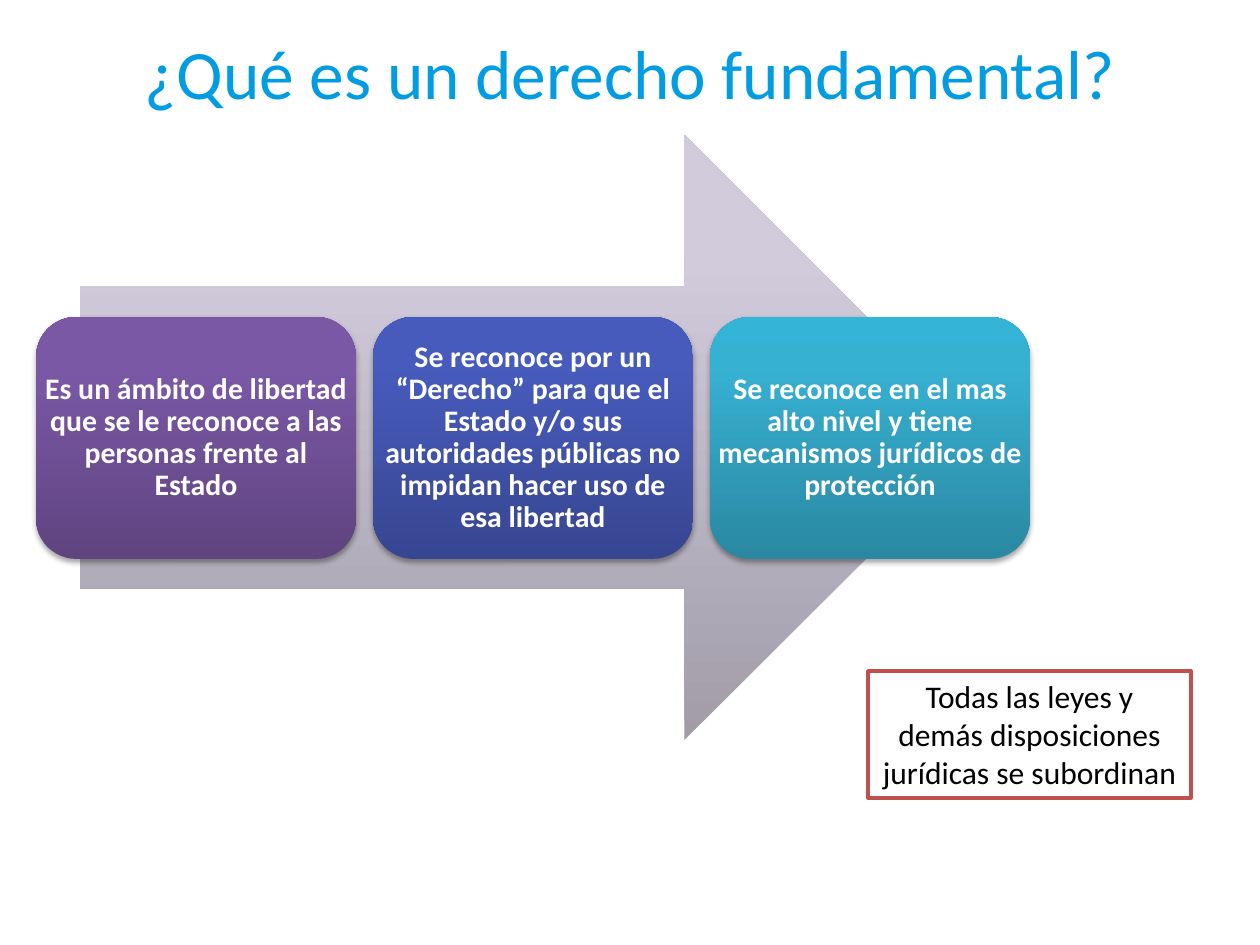
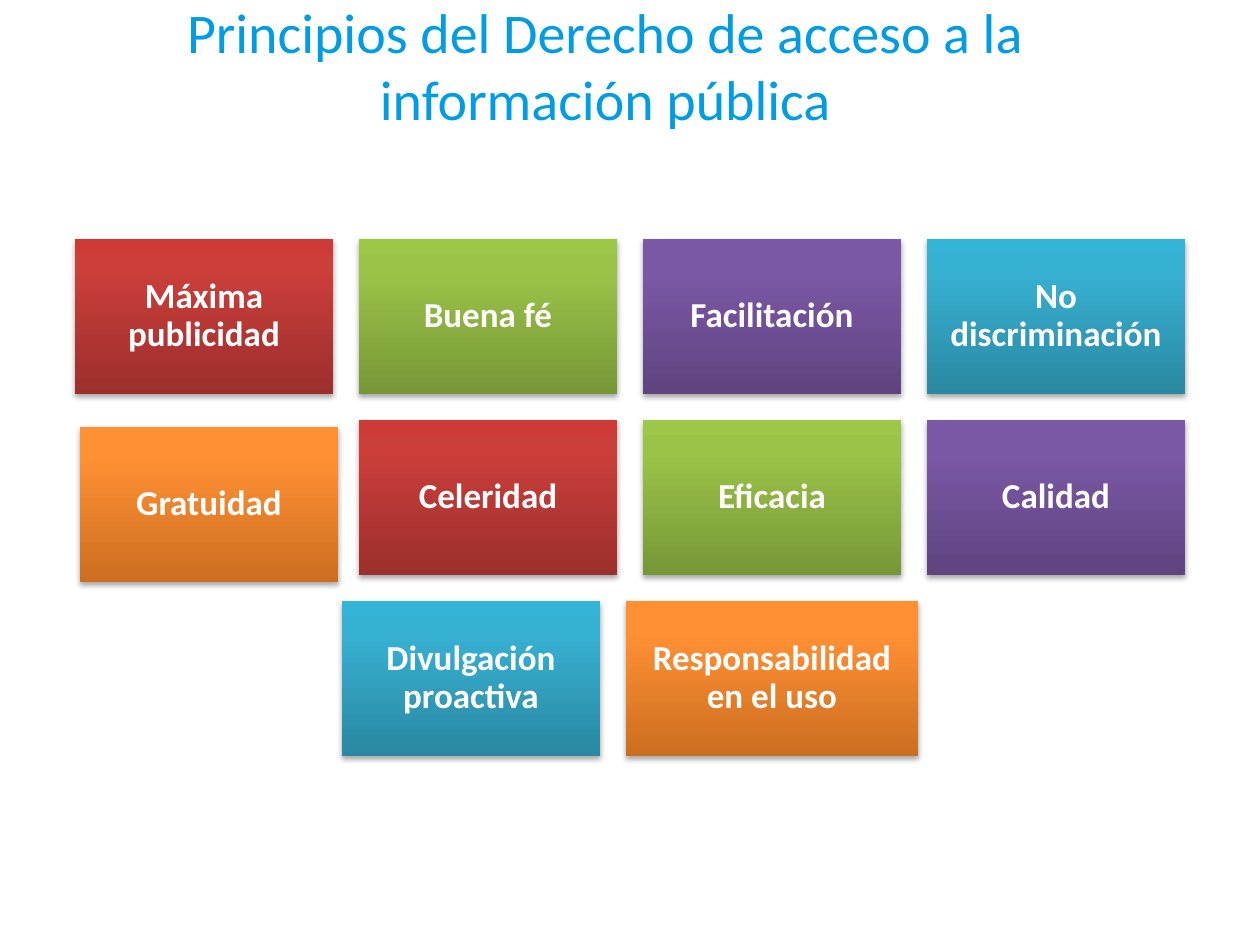
from copy import deepcopy
from dataclasses import dataclass
from itertools import cycle

from lxml import etree
from pptx import Presentation
from pptx.dml.color import RGBColor
from pptx.enum.shapes import MSO_SHAPE
from pptx.enum.text import MSO_ANCHOR, MSO_AUTO_SIZE, PP_ALIGN
from pptx.oxml.ns import qn
from pptx.util import Inches, Pt

ARROW, ROUND, RECT = (MSO_SHAPE.RIGHT_ARROW, MSO_SHAPE.ROUNDED_RECTANGLE,
                      MSO_SHAPE.RECTANGLE)
CENTER, MIDDLE, TOP = PP_ALIGN.CENTER, MSO_ANCHOR.MIDDLE, MSO_ANCHOR.TOP
NO_FIT = MSO_AUTO_SIZE.NONE
TITLE_ONLY = 5
PX_PER_INCH = 126


@dataclass(frozen=True)
class Theme:
    font: str = "Calibri"
    title: str = "019CE1"
    white: str = "FFFFFF"
    black: str = "000000"
    edge: str = "C0504D"
    # Gradients run from the bottom edge to the top
    gray: tuple = ("A19CA8", "D1CBDB", "D2CBDC")
    red: tuple = ("9C2F2D", "CB3E3A", "CE3B37")
    green: tuple = ("779737", "9BC348", "9DC746")
    purple: tuple = ("5F4480", "7B58A6", "7C57A8")
    blue: tuple = ("374691", "475BBC", "455ABF")
    teal: tuple = ("2A88A2", "37B1D2", "34B4D6")
    orange: tuple = ("CC6E20", "FF9034", "FF9136")
    stops: tuple = (0, 0.8, 1)
    big: float = 39.6
    head: int = 32
    tile: int = 20
    note: int = 18
    card: int = 17


T = Theme()


def px(n):
    return round(n * Inches(1) / PX_PER_INCH)


def place(box):
    return [px(n) for n in box]


def write(host, text, size, color, bold=False, inset=None, anchor=MIDDLE,
          leading=None):
    frame = host.text_frame
    frame.word_wrap = True
    frame.auto_size = NO_FIT
    frame.vertical_anchor = anchor
    if inset is not None:
        frame.margin_left = frame.margin_right = px(inset)
        frame.margin_top = frame.margin_bottom = px(inset)
    para = frame.paragraphs[0]
    para.text = text
    para.alignment = CENTER
    para.line_spacing = leading
    font = para.font
    font.name, font.size, font.bold = T.font, Pt(size), bold
    font.color.rgb = RGBColor.from_string(color)


def shade(shape, colors):
    """Fill with three vertical gradient stops."""
    shape.fill.gradient()
    stop = shape._element.spPr.find(".//" + qn("a:gs"))
    stop.addnext(deepcopy(stop))
    shape.fill.gradient_angle = 90
    for stop, spot, color in zip(shape.fill.gradient_stops, T.stops, colors):
        stop.position = spot
        stop.color.rgb = RGBColor.from_string(color)


def cast(shape):
    """Add a soft shadow below the shape."""
    effects = shape._element.spPr.find(qn("a:effectLst"))
    shadow = etree.SubElement(effects, qn("a:outerShdw"), blurRad="40000",
                              dist="23000", dir="5400000", rotWithShape="0")
    color = etree.SubElement(shadow, qn("a:srgbClr"), val=T.black)
    etree.SubElement(color, qn("a:alpha"), val="35000")


def block(slide, kind, box, colors, raised=True):
    shape = slide.shapes.add_shape(kind, *place(box))
    shape.shadow.inherit = False
    shape.line.fill.background()
    shade(shape, colors)
    if raised:
        cast(shape)
    return shape


def start(deck, title, box, size):
    """Add a slide with its title."""
    slide = deck.slides.add_slide(deck.slide_layouts[TITLE_ONLY])
    head = slide.shapes.title
    head.left, head.top, head.width, head.height = place(box)
    write(head, title, size, T.title)
    return slide


def cards(slide, box, items, gap=17):
    """Row of equal rounded cards; labels span each card's full width."""
    left, top, width, height = box
    wide = (width - gap * (len(items) - 1)) // len(items)
    for i, (text, colors) in enumerate(items):
        spot = (left + i * (wide + gap), top, wide, height)
        block(slide, ROUND, spot, colors)
        label = slide.shapes.add_textbox(*place(spot))
        write(label, text, T.card, T.white, True, 8, leading=0.9)


def note(slide, box, text):
    shape = slide.shapes.add_shape(RECT, *place(box))
    shape.shadow.inherit = False
    shape.fill.solid()
    shape.fill.fore_color.rgb = RGBColor.from_string(T.white)
    shape.line.color.rgb = RGBColor.from_string(T.edge)
    shape.line.width = Pt(2)
    write(shape, text, T.note, T.black, anchor=TOP)


def tiles(slide, box, rows, wide=258, gap=26):
    """Centred rows of tiles; an item is text, extra width, x and y shift."""
    left, top, width, height = box
    tall = (height - gap * (len(rows) - 1)) // len(rows)
    tints = cycle((T.red, T.green, T.purple, T.teal, T.orange))
    for i, row in enumerate(rows):
        total = sum(wide + extra + gap for _, extra, _, _ in row) - gap
        x = left + (width - total) // 2
        y = top + i * (tall + gap)
        for text, extra, dx, dy in row:
            spot = (x + dx, y + dy, wide + extra, tall)
            tile = block(slide, RECT, spot, next(tints))
            write(tile, text, T.tile, T.white, True, 10, leading=0.9)
            x += wide + extra + gap


def rights(deck):
    slide = start(deck, "¿Qué es un derecho fundamental?",
                  (63, 38, 1134, 68), T.big)
    block(slide, ARROW, (80, 135, 907, 605), T.gray, raised=False)
    cards(slide, (36, 317, 994, 242), [
        ("Es un ámbito de libertad que se le reconoce a las personas "
         "frente al Estado", T.purple),
        ("Se reconoce por un “Derecho” para que el Estado y/o sus "
         "autoridades públicas no impidan hacer uso de esa libertad", T.blue),
        ("Se reconoce en el mas alto nivel y tiene mecanismos jurídicos "
         "de protección", T.teal),
    ])
    note(slide, (868, 671, 323, 127),
         "Todas las leyes y demás disposiciones jurídicas se subordinan")


def values(deck):
    slide = start(deck, "Principios del Derecho de acceso a la "
                  "información pública", (84, 26, 1043, 77), T.head)
    tiles(slide, (75, 239, 1110, 517), [
        [("Máxima publicidad", 0, 0, 0), ("Buena fé", 0, 0, 0),
         ("Facilitación", 0, 0, 0), ("No discriminación", 0, 0, 0)],
        [("Gratuidad", 0, 5, 7), ("Celeridad", 0, 0, 0),
         ("Eficacia", 0, 0, 0), ("Calidad", 0, 0, 0)],
        [("Divulgación proactiva", 0, 0, 0),
         ("Responsabilidad en el uso", 34, 0, 0)],
    ])


def main():
    deck = Presentation()
    deck.slide_width, deck.slide_height = Inches(10), Inches(7.5)
    rights(deck)
    values(deck)
    deck.save("out.pptx")


if __name__ == "__main__":
    main()
